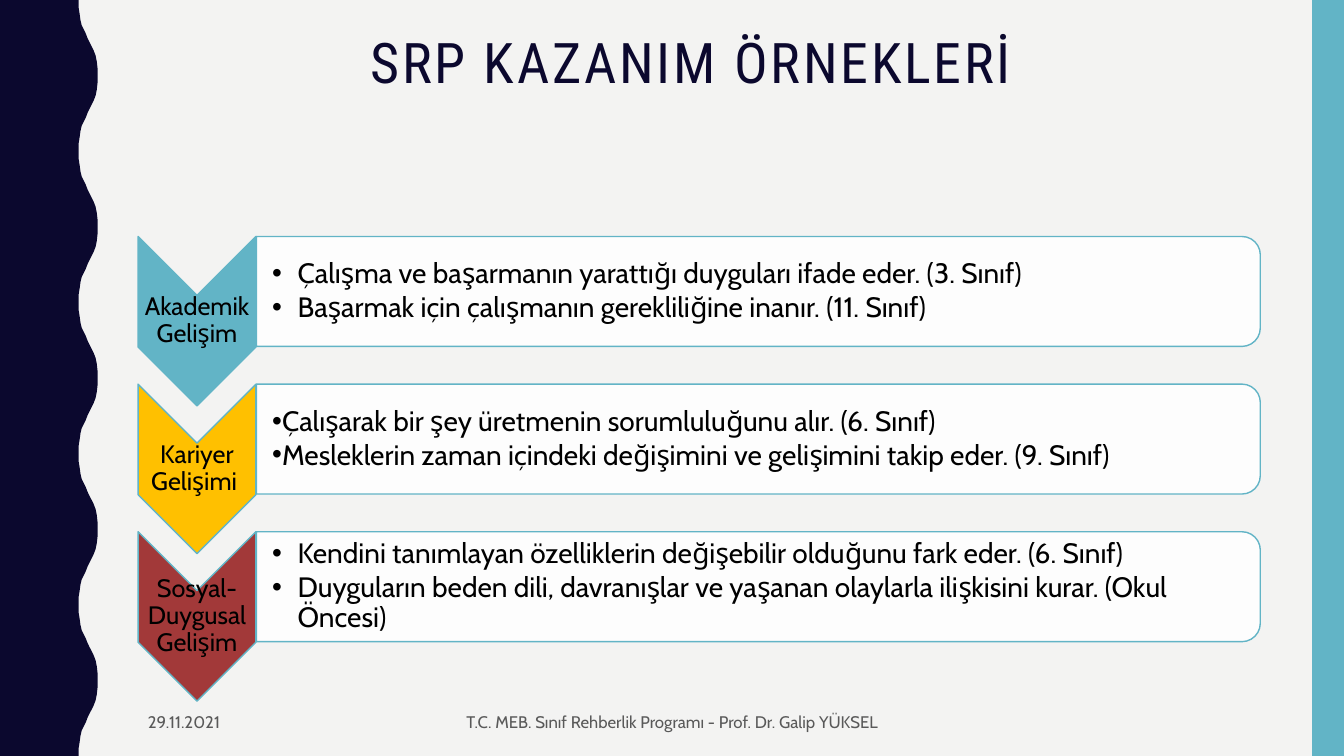
"""Build the slide of sample outcomes for three areas of growth."""
from lxml.etree import SubElement
from pptx import Presentation
from pptx.dml.color import RGBColor
from pptx.enum.shapes import MSO_SHAPE
from pptx.enum.text import MSO_ANCHOR, MSO_AUTO_SIZE, PP_ALIGN
from pptx.oxml.ns import qn
from pptx.util import Cm, Pt

TITLE = "SRP KAZANIM ÖRNEKLERİ "
ROWS = [
    ("Akademik Gelişim", "62B4C6", 0.64, [
        "Çalışma ve başarmanın yarattığı duyguları ifade eder. (3. Sınıf)",
        "Başarmak için çalışmanın gerekliliğine inanır. (11. Sınıf)"]),
    ("Kariyer Gelişimi ", "FFC000", 0, [
        "Çalışarak bir şey üretmenin sorumluluğunu alır. (6. Sınıf)",
        "Mesleklerin zaman içindeki değişimini ve gelişimini takip eder. (9. Sınıf)"]),
    ("Sosyal-Duygusal Gelişim", "A23939", 0.64, [
        "Kendini tanımlayan özelliklerin değişebilir olduğunu fark eder. (6. Sınıf)",
        "Duyguların beden dili, davranışlar ve yaşanan olaylarla ilişkisini kurar. (Okul Öncesi)"]),
]
NOTES = [
    ("29.11.2021", 3.48, 6.48, PP_ALIGN.LEFT),
    ("T.C. MEB. Sınıf Rehberlik Programı - Prof. Dr. Galip YÜKSEL", 11.23, 11.43,
     PP_ALIGN.CENTER),
]
NAVY, TEAL, GREY, PAPER = "0B082E", "62B4C6", "595959", "F3F3F2"
WIDE, HIGH = 33.87, 19.05
LEFT, TOP, STEP = 3.48, 5.96, 3.72
ARROW, TALL = 2.97, 4.27
EDGE, SPAN, CARD = 6.46, 25.3, 2.77
WAVE = 3.81
CURVE = [(1.98, 0), (1.98, 0.18), (2.01, 0.36), (2.03, 0.51), (2.06, 0.64),
         (2.11, 0.74), (2.16, 0.84), (2.21, 0.97), (2.26, 1.07), (2.31, 1.17),
         (2.36, 1.27), (2.41, 1.4), (2.44, 1.55), (2.46, 1.73), (2.46, 1.9)]
TIGHT = {"margin_left": Cm(0.03), "margin_right": Cm(0.03),
         "margin_top": Cm(0.03), "margin_bottom": Cm(0.03)}


def tint(code):
    return RGBColor.from_string(code)


def put(item, vals):
    for key, val in vals.items():
        setattr(item, key, val)


def place(item, x, y, w, h):
    put(item, {"left": Cm(x), "top": Cm(y), "width": Cm(w), "height": Cm(h)})


def paint(shape, fill, line=None):
    shape.shadow.inherit = False
    shape.fill.solid()
    shape.fill.fore_color.rgb = tint(fill)
    if line:
        shape.line.color.rgb = tint(line)
        shape.line.width = Pt(1)
    else:
        shape.line.fill.background()


def turn(kind, x, y, w, h, fill):
    shape = shapes.add_shape(kind, Cm(x + (w - h) / 2), Cm(y + (h - w) / 2), Cm(h), Cm(w))
    shape.rotation = 90
    paint(shape, fill, TEAL)
    return shape


def write(shape, lines, size, code, face="Cabin", frame=None, para=None):
    text = shape.text_frame
    put(text, {"word_wrap": True, "auto_size": MSO_AUTO_SIZE.NONE,
               "vertical_anchor": MSO_ANCHOR.MIDDLE, **(frame or {})})
    text.text = "\n".join(lines)
    for part in text.paragraphs:
        put(part, {"space_before": Pt(0), **(para or {})})
        font = part.runs[0].font
        put(font, {"name": face, "size": Pt(size), "bold": False})
        font.color.rgb = tint(code)
    return text.paragraphs


def label(lines, x, y, w, h, *style, **more):
    box = shapes.add_textbox(Cm(x), Cm(y), Cm(w), Cm(h))
    write(box, lines, *style, **more)


def bullet(part, dent):
    props = part._p.get_or_add_pPr()
    props.set("marL", str(Cm(dent)))
    props.set("indent", str(-Cm(dent)))
    SubElement(props, qn("a:buChar")).set("char", "•")


deck = Presentation()
put(deck, {"slide_width": Cm(WIDE), "slide_height": Cm(HIGH)})
slide = deck.slides.add_slide(deck.slide_layouts[4])
shapes = slide.shapes
slide.background.fill.solid()
slide.background.fill.fore_color.rgb = tint(PAPER)

cycle = CURVE + [(x, WAVE - y) for x, y in CURVE[-2::-1]]
shore = [(x, y + WAVE * turns) for turns in range(5) for x, y in cycle]
sea = shapes.build_freeform(0, 0)
sea.add_line_segments([(Cm(x), Cm(y)) for x, y in shore + [(0, HIGH)]], close=True)
paint(sea.convert_to_shape(), NAVY)
paint(shapes.add_shape(MSO_SHAPE.RECTANGLE, Cm(33.07), 0, Cm(0.8), Cm(HIGH)), TEAL)

head, *bodies = list(slide.placeholders)
spare = bodies.pop()
spare._element.getparent().remove(spare._element)
place(head, LEFT, 0.76, 28.27, 3.4)
for part in write(head, [TITLE], 40, NAVY, "Roboto Condensed",
                  {"vertical_anchor": MSO_ANCHOR.TOP},
                  {"alignment": PP_ALIGN.CENTER, "line_spacing": 0.9}):
    part.runs[0]._r.get_or_add_rPr().set("spc", "200")

for row, (body, (name, hue, dent, goals)) in enumerate(zip(bodies, ROWS)):
    y = TOP + row * STEP
    turn(MSO_SHAPE.CHEVRON, LEFT, y, ARROW, TALL, hue)
    label([name], LEFT, y + 1.5, ARROW, 1.27, 18, "000000", frame=TIGHT,
          para={"alignment": PP_ALIGN.CENTER, "line_spacing": 0.9})
    card = turn(MSO_SHAPE.ROUND_2_SAME_RECTANGLE, EDGE, y, SPAN, CARD, "FFFFFF")
    shade = card._element.spPr.find(".//" + qn("a:srgbClr"))
    SubElement(shade, qn("a:alpha")).set("val", "90000")
    card._element.addnext(body._element)
    place(body, EDGE, y + 0.14, 25.17, 2.49)
    for part in write(body, goals, 20, "000000",
                      frame={**TIGHT, "margin_left": Cm(0.4)},
                      para={"alignment": PP_ALIGN.LEFT, "line_spacing": 0.9,
                            "space_after": Pt(2.5)}):
        bullet(part, dent)

for note, x, w, side in NOTES:
    label([note], x, 17.7, w, 0.97, 12, GREY, para={"alignment": side})

deck.save("out.pptx")
